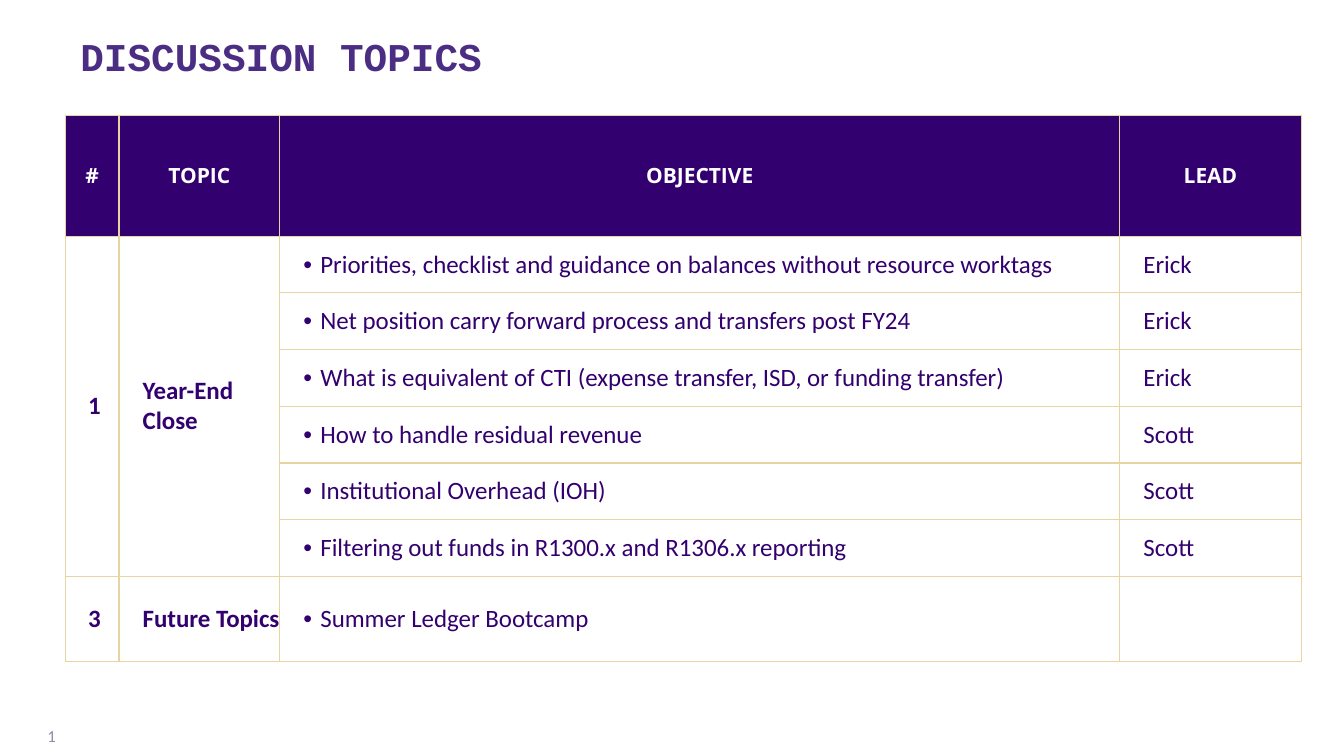
from lxml import etree
from pptx import Presentation
from pptx.dml.color import RGBColor
from pptx.enum import text
from pptx.oxml import ns
from pptx.util import Pt

PURPLE = RGBColor(0x33, 0x00, 0x6F)
TITLE_PURPLE = RGBColor(0x4B, 0x2E, 0x83)
GOLD = RGBColor(0xE8, 0xD3, 0xA2)
GREY = RGBColor(0x90, 0x8C, 0xA4)
WHITE = RGBColor(0xFF, 0xFF, 0xFF)

COLUMN_WIDTHS = [41, 122.4, 640.1, 138.2]
HEADER_HEIGHT, ROW_HEIGHT, LAST_HEIGHT = 92.2, 43.2, 64.8
HEADINGS = ["#", "TOPIC", "OBJECTIVE", "LEAD"]
TOPICS = [
    ("1", "Year-End Close", [
        ("Priorities, checklist and guidance on balances without resource worktags", "Erick"),
        ("Net position carry forward process and transfers post FY24", "Erick"),
        ("What is equivalent of CTI (expense transfer, ISD, or funding transfer)", "Erick"),
        ("How to handle residual revenue", "Scott"),
        ("Institutional Overhead (IOH)", "Scott"),
        ("Filtering out funds in R1300.x and R1306.x reporting", "Scott"),
    ]),
    ("3", "Future Topics", [("Summer Ledger Bootcamp", "")]),
]


def set_font(para, name, size, color, bold=False):
    para.font.name = name
    para.font.size = Pt(size)
    para.font.color.rgb = color
    para.font.bold = bold


def set_indent(para, margin, hanging=0, bullet=None):
    properties = para._p.get_or_add_pPr()
    properties.set("marL", str(Pt(margin)))
    properties.set("indent", str(Pt(-hanging)))
    if bullet:
        etree.SubElement(properties, ns.qn("a:buFont"), typeface="Arial")
        etree.SubElement(properties, ns.qn("a:buChar"), char=bullet)


def style_cell(cell, fill=None, left_inset=3.6):
    cell.vertical_anchor = text.MSO_ANCHOR.MIDDLE
    cell.margin_left = Pt(left_inset)
    cell.margin_right = cell.margin_top = cell.margin_bottom = 0
    properties = cell._tc.get_or_add_tcPr()
    for side in ("lnL", "lnR", "lnT", "lnB"):
        line = etree.SubElement(properties, ns.qn(f"a:{side}"), w=str(Pt(1)))
        paint = etree.SubElement(line, ns.qn("a:solidFill"))
        etree.SubElement(paint, ns.qn("a:srgbClr"), val=str(GOLD))
    if fill is None:
        cell.fill.background()
    else:
        cell.fill.solid()
        cell.fill.fore_color.rgb = fill


def write_body(cell, words, column):
    para = cell.text_frame.paragraphs[0]
    para.text = words
    if column == 0:
        para.alignment = text.PP_ALIGN.CENTER
    elif column == 2:
        set_indent(para, 27.4, 13, "•")
    else:
        set_indent(para, 14.4)
    set_font(para, "Calibri", 19, PURPLE, bold=column < 2)


def add_title(slide, left, top, width, height):
    title = slide.shapes.title
    title.left, title.top, title.width, title.height = map(Pt, (left, top, width, height))
    title.text_frame.text = "DISCUSSION TOPICS"
    title.text_frame.vertical_anchor = text.MSO_ANCHOR.MIDDLE
    para = title.text_frame.paragraphs[0]
    para.alignment = text.PP_ALIGN.LEFT
    para.line_spacing = 0.9
    set_font(para, "Courier New", 30, TITLE_PURPLE, bold=True)


def add_topic_table(slide, left, top):
    count = sum(len(objectives) for _, _, objectives in TOPICS)
    heights = [HEADER_HEIGHT] + [ROW_HEIGHT] * (count - 1) + [LAST_HEIGHT]
    frame = slide.shapes.add_table(
        len(heights), len(COLUMN_WIDTHS), Pt(left), Pt(top),
        Pt(sum(COLUMN_WIDTHS)), Pt(sum(heights)))
    table = frame.table
    table.horz_banding = False
    for column, width in zip(table.columns, COLUMN_WIDTHS):
        column.width = Pt(width)
    for row, height in zip(table.rows, heights):
        row.height = Pt(height)

    for column, heading in enumerate(HEADINGS):
        cell = table.cell(0, column)
        style_cell(cell, PURPLE, left_inset=0)
        para = cell.text_frame.paragraphs[0]
        para.text = heading
        para.alignment = text.PP_ALIGN.CENTER
        set_font(para, "Open Sans", 16, WHITE, bold=True)

    first = 1
    for number, topic, objectives in TOPICS:
        last = first + len(objectives) - 1
        for row, (objective, lead) in enumerate(objectives, first):
            for column in range(len(COLUMN_WIDTHS)):
                style_cell(table.cell(row, column))
            write_body(table.cell(row, 2), objective, 2)
            write_body(table.cell(row, 3), lead, 3)
        for column, words in enumerate((number, topic)):
            if last > first:
                table.cell(first, column).merge(table.cell(last, column))
            write_body(table.cell(first, column), words, column)
        first = last + 1


def add_page_number(slide, left, top, width, height):
    box = slide.shapes.add_textbox(Pt(left), Pt(top), Pt(width), Pt(height))
    box.text_frame.word_wrap = True
    box.text_frame.vertical_anchor = text.MSO_ANCHOR.MIDDLE
    para = box.text_frame.paragraphs[0]
    para.text = "1"
    para.alignment = text.PP_ALIGN.RIGHT
    set_font(para, "Calibri", 12.8, GREY)


def main():
    deck = Presentation()
    deck.slide_width, deck.slide_height = Pt(1024), Pt(576)
    slide = deck.slides.add_slide(deck.slide_layouts[5])
    add_title(slide, 54, 26, 896.4, 37.4)
    add_topic_table(slide, 49.7, 87.8)
    add_page_number(slide, 13.7, 545, 36, 31)
    deck.save("out.pptx")


if __name__ == "__main__":
    main()
